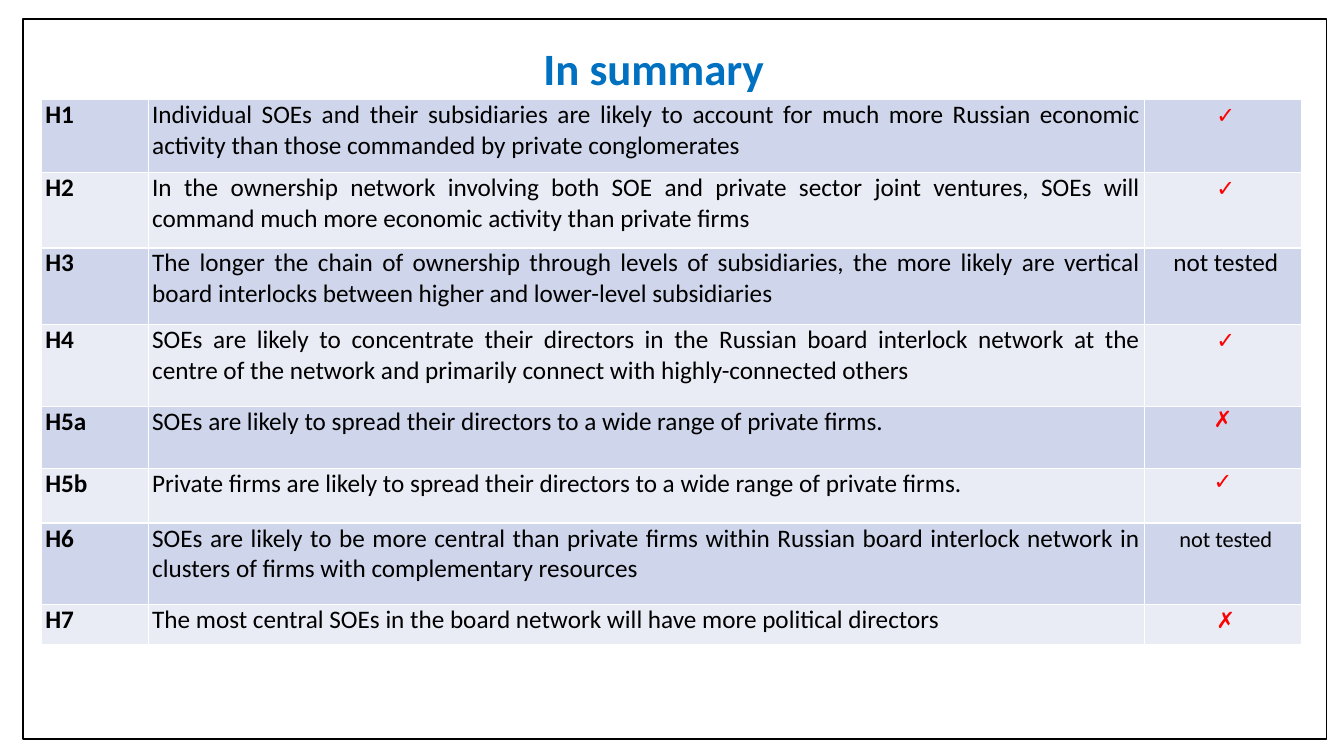
from lxml.etree import SubElement
from pptx import Presentation
from pptx.dml.color import RGBColor
from pptx.enum.shapes import MSO_SHAPE
from pptx.enum.text import MSO_AUTO_SIZE, PP_ALIGN
from pptx.oxml.ns import qn
from pptx.util import Inches, Pt

# Content: label, row height, claim, runs of the result (text, style)
TITLE = "In summary"
GAP = (" ", "body")
YES = ("✓", "mark")
NO = ("✗", "mark")
ROWS = [
    ("H1", 0.72, "Individual SOEs and their subsidiaries are likely to account for much more "
     "Russian economic activity than those commanded by private conglomerates", [GAP, YES]),
    ("H2", 0.75, "In the ownership network involving both SOE and private sector joint ventures, "
     "SOEs will command much more economic activity than private firms", [GAP, YES]),
    ("H3", 0.76, "The longer the chain of ownership through levels of subsidiaries, the more "
     "likely are vertical board interlocks between higher and lower-level subsidiaries",
     [GAP, ("not tested", "body")]),
    ("H4", 0.81, "SOEs are likely to concentrate their directors in the Russian board interlock "
     "network at the centre of the network and primarily connect with highly-connected others",
     [GAP, YES]),
    ("H5a", 0.62, "SOEs are likely to spread their directors to a wide range of private firms.",
     [NO]),
    ("H5b", 0.54, "Private firms are likely to spread their directors to a wide range of "
     "private firms.", [YES]),
    ("H6", 0.81, "SOEs are likely to be more central than private firms within Russian board "
     "interlock network in clusters of firms with complementary resources",
     [GAP, ("not tested", "small")]),
    ("H7", 0.4, "The most central SOEs in the board network will have more political directors",
     [GAP, NO]),
]
COLS = [1.06, 9.88, 1.56]

# Theme: styles are size, colour, bold
THEME = {
    "font": "Calibri",
    "after": 8,
    "frame": "000000",
    "rule": "FFFFFF",
    "bands": ["CFD5EA", "E9EBF5"],
    "title": (32, "0070C0", True),
    "label": (18, "000000", True),
    "body": (18, "000000", False),
    "small": (16, "000000", False),
    "mark": (16, "FF0000", True),
}


def write(frame, runs, align):
    par = frame.paragraphs[0]
    par.alignment = align
    par.space_after = Pt(THEME["after"])
    for text, style in runs:
        size, color, bold = THEME[style]
        run = par.add_run()
        run.text = text
        font = run.font
        font.name, font.size, font.bold = THEME["font"], Pt(size), bold
        font.color.rgb = RGBColor.from_string(color)


def edge(cell):
    props = cell._tc.get_or_add_tcPr()
    for side in ("lnL", "lnR", "lnT", "lnB"):
        line = SubElement(props, qn(f"a:{side}"), w=str(Pt(1)))
        fill = SubElement(line, qn("a:solidFill"))
        SubElement(fill, qn("a:srgbClr"), val=THEME["rule"])


def build():
    deck = Presentation()
    deck.slide_width, deck.slide_height = Inches(13.33), Inches(7.5)
    slide = deck.slides.add_slide(deck.slide_layouts[6])
    shapes = slide.shapes

    # Frame
    box = shapes.add_shape(MSO_SHAPE.RECTANGLE, Inches(0.23), Inches(0.19),
                           Inches(12.93), Inches(7.14))
    box.shadow.inherit = False
    box.fill.background()
    box.line.color.rgb = RGBColor.from_string(THEME["frame"])
    box.line.width = Pt(1)

    # Title
    head = shapes.add_textbox(Inches(3.15), Inches(0.35), Inches(6.67), Inches(0.64)).text_frame
    head.word_wrap = True
    head.auto_size = MSO_AUTO_SIZE.SHAPE_TO_FIT_TEXT
    write(head, [(TITLE, "title")], PP_ALIGN.CENTER)

    # Table
    high = sum(row[1] for row in ROWS)
    table = shapes.add_table(len(ROWS), len(COLS), Inches(0.41), Inches(0.99),
                             Inches(sum(COLS)), Inches(high)).table
    table.first_row = table.horz_banding = False
    for col, width in zip(table.columns, COLS):
        col.width = Inches(width)
    for i, (label, height, claim, result) in enumerate(ROWS):
        table.rows[i].height = Inches(height)
        parts = [
            ([(label, "label")], PP_ALIGN.JUSTIFY),
            ([(claim, "body")], PP_ALIGN.JUSTIFY),
            (result, PP_ALIGN.CENTER),
        ]
        for j, (runs, align) in enumerate(parts):
            cell = table.cell(i, j)
            cell.margin_left = cell.margin_right = Inches(0.04)
            cell.margin_top = cell.margin_bottom = 0
            edge(cell)
            cell.fill.solid()
            cell.fill.fore_color.rgb = RGBColor.from_string(THEME["bands"][i % 2])
            write(cell.text_frame, runs, align)

    deck.save("out.pptx")


if __name__ == "__main__":
    build()
